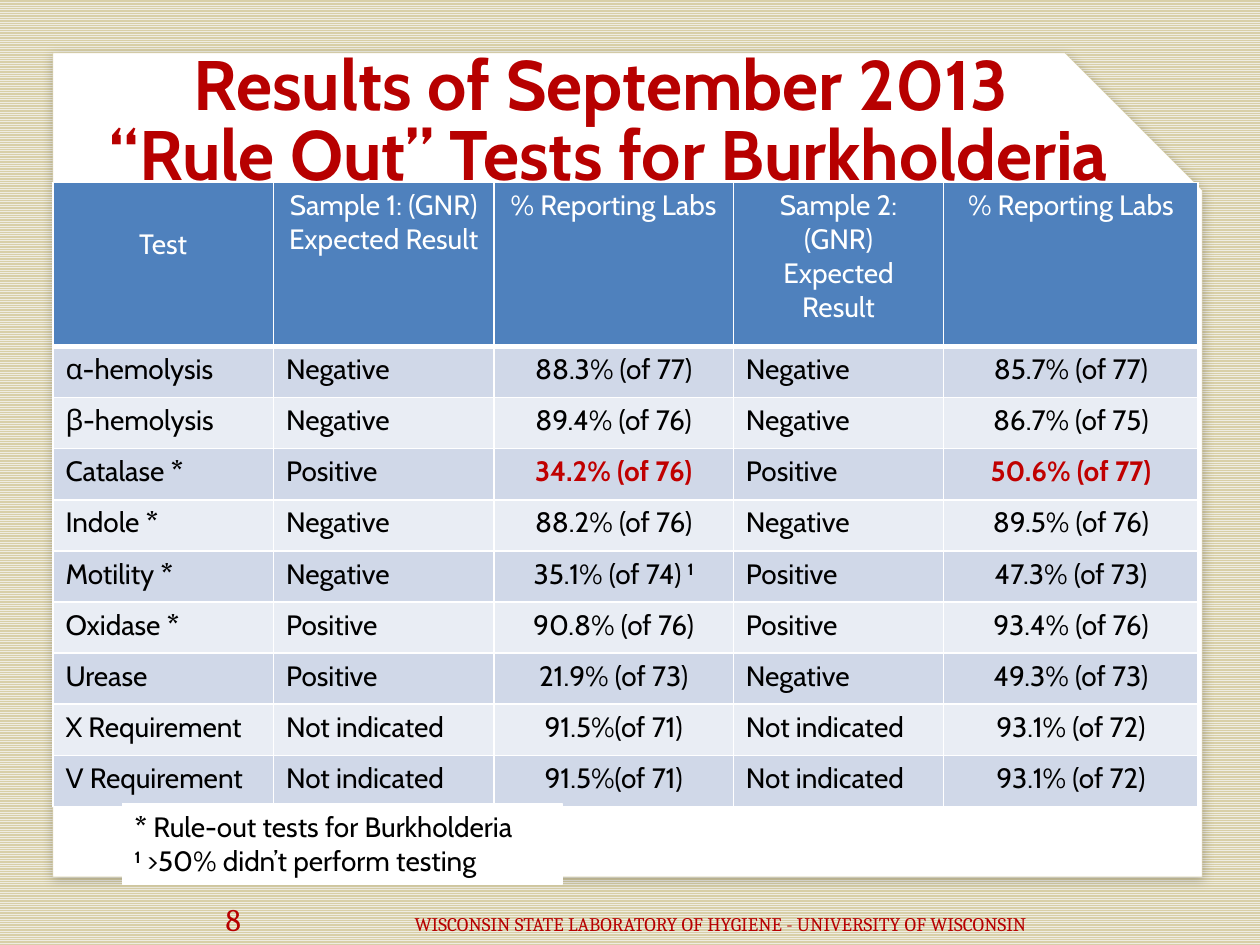
from lxml import etree
from pptx import Presentation
from pptx.dml.color import RGBColor
from pptx.enum.dml import MSO_PATTERN
from pptx.enum.shapes import MSO_SHAPE
from pptx.enum.text import MSO_ANCHOR, PP_ALIGN
from pptx.oxml import parse_xml
from pptx.oxml.ns import nsdecls, qn
from pptx.util import Inches, Pt

LEFT, CENTER = PP_ALIGN.LEFT, PP_ALIGN.CENTER
TOP, MIDDLE = MSO_ANCHOR.TOP, MSO_ANCHOR.MIDDLE
CARD, RECTANGLE = MSO_SHAPE.SNIP_1_RECTANGLE, MSO_SHAPE.RECTANGLE
STRIPES = MSO_PATTERN.NARROW_HORIZONTAL

BODY_FONT, FOOTER_FONT = "Cabin", "Cambria"
WHITE, BLACK, RED, ALERT = "FFFFFF", "000000", "B70000", "C00000"
CREAM, SAND = "EEECE1", "D8CFA7"
HEADER_BLUE, BANDS = "4F81BD", ("D0D8E8", "E9EDF4")

UNIT = 0.1  # inches: the slide is a grid of 100 columns by 75 rows
FOOTNOTE_MARKS = ("*", "1")

TITLE = "Results of September 2013\v “Rule Out” Tests for Burkholderia"
HEADER = ["Test", "Sample 1: (GNR) Expected Result", "% Reporting Labs",
          "Sample 2: (GNR) Expected Result", "% Reporting Labs"]
RESULTS = [
    ["α-hemolysis", "Negative", "88.3% (of 77)", "Negative", "85.7% (of 77)"],
    ["β-hemolysis", "Negative", "89.4% (of 76)", "Negative", "86.7% (of 75)"],
    ["Catalase |*", "Positive", "34.2% (of 76)", "Positive", "50.6% (of 77)"],
    ["Indole |*", "Negative", "88.2% (of 76)", "Negative", "89.5% (of 76)"],
    ["Motility |*", "Negative", "35.1% (of 74) |1", "Positive", "47.3% (of 73)"],
    ["Oxidase |*", "Positive", "90.8% (of 76)", "Positive", "93.4% (of 76)"],
    ["Urease", "Positive", "21.9% (of 73)", "Negative", "49.3% (of 73)"],
    ["X Requirement", "Not indicated", "91.5%(of 71)", "Not indicated", "93.1% (of 72)"],
    ["V Requirement", "Not indicated", "91.5%(of 71)", "Not indicated", "93.1% (of 72)"],
]
HIGHLIGHTS = ("34.2% (of 76)", "50.6% (of 77)")
FOOTNOTES = ["*| Rule-out tests for Burkholderia", "1| >50% didn’t perform testing"]
FOOTER = "WISCONSIN STATE LABORATORY OF HYGIENE - UNIVERSITY OF WISCONSIN"


def color(hex_string):
    return RGBColor.from_string(hex_string)


def grid(*units):
    return [Inches(unit * UNIT) for unit in units]


class SlideBuilder:
    def __init__(self, presentation):
        self.slide = presentation.slides.add_slide(presentation.slide_layouts[6])

    def background(self, foreground, back):
        fill = self.slide.background.fill
        fill.patterned()
        fill.pattern = STRIPES
        fill.fore_color.rgb = color(foreground)
        fill.back_color.rgb = color(back)

    def style(self, run, size=16, font=BODY_FONT, ink=BLACK, bold=False):
        run.font.size, run.font.name, run.font.bold = Pt(size), font, bold
        run.font.color.rgb = color(ink)

    def marked_text(self, paragraph, text, ink=BLACK, bold=False, align=LEFT):
        """Add runs split at "|"; footnote marks are bold, digits raised."""
        paragraph.alignment = align
        for piece in text.split("|"):
            run = paragraph.add_run()
            run.text = piece
            self.style(run, ink=ink, bold=bold or piece in FOOTNOTE_MARKS)
            if piece == "1":
                run.font._element.set("baseline", "30000")

    def shape(self, kind, place, line_color, line_width):
        shape = self.slide.shapes.add_shape(kind, *grid(*place))
        shape.shadow.inherit = False
        shape.fill.solid()
        shape.fill.fore_color.rgb = color(WHITE)
        shape.line.color.rgb = color(line_color)
        shape.line.width = Pt(line_width)
        return shape

    def card(self, place):
        card = self.shape(CARD, place, SAND, 0.25)
        effects = card._element.spPr.find(qn("a:effectLst"))
        effects.append(parse_xml(
            f'<a:outerShdw {nsdecls("a")} blurRad="{Pt(6)}" dist="{Pt(2)}" '
            f'dir="{80 * 60000}" algn="tl" rotWithShape="0"><a:srgbClr val="{BLACK}">'
            '<a:alpha val="22000"/></a:srgbClr></a:outerShdw>'))

    def text_box(self, place, anchor, inset_left=0):
        frame = self.slide.shapes.add_textbox(*grid(*place)).text_frame
        frame.word_wrap, frame.vertical_anchor = True, anchor
        frame.margin_top = frame.margin_right = frame.margin_bottom = 0
        frame.margin_left, = grid(inset_left)
        return frame.paragraphs[0]

    def title(self, place, text):
        paragraph = self.text_box(place, TOP)
        paragraph.text = text
        paragraph.alignment, paragraph.line_spacing = CENTER, Pt(40)
        for run in paragraph.runs:
            self.style(run, 40, ink=RED, bold=True)

    def footer(self, place, number, text, number_left, text_left):
        paragraph = self.text_box(place, MIDDLE, number_left)
        tab_list = etree.SubElement(paragraph._p.get_or_add_pPr(), qn("a:tabLst"))
        position, = grid(text_left - number_left)
        etree.SubElement(tab_list, qn("a:tab"), pos=str(position), algn="l")
        for piece, size in ((number, 18), ("\t" + text, 11)):
            run = paragraph.add_run()
            run.text = piece
            self.style(run, size, FOOTER_FONT, RED)

    def cell(self, cell, text, fill, top, bottom, **text_style):
        """Fill one cell; top and bottom are border widths in points."""
        properties = cell._tc.get_or_add_tcPr()
        for side, width in (("L", 1), ("R", 1), ("T", top), ("B", bottom)):
            properties.append(parse_xml(
                f'<a:ln{side} {nsdecls("a")} w="{Pt(width)}"><a:solidFill>'
                f'<a:srgbClr val="{WHITE}"/></a:solidFill></a:ln{side}>'))
        cell.fill.solid()
        cell.fill.fore_color.rgb = color(fill)
        self.marked_text(cell.text_frame.paragraphs[0], text, **text_style)

    def table(self, place, widths, header_height):
        table = self.slide.shapes.add_table(
            len(RESULTS) + 1, len(HEADER), *grid(*place)).table
        row_height = (place[3] - header_height) / len(RESULTS)
        for column, width in zip(table.columns, grid(*widths)):
            column.width = width
        heights = [header_height] + [row_height] * len(RESULTS)
        for row, height in zip(table.rows, grid(*heights)):
            row.height = height
        for column, text in enumerate(HEADER):
            self.cell(table.cell(0, column), text, HEADER_BLUE, 1, 3,
                      ink=WHITE, align=CENTER)
        table.cell(0, 0).margin_top, = grid(3.6)
        for row, texts in enumerate(RESULTS, 1):
            for column, text in enumerate(texts):
                alert = text in HIGHLIGHTS
                self.cell(table.cell(row, column), text, BANDS[(row - 1) % 2],
                          3 if row == 1 else 1, 1,
                          ink=ALERT if alert else BLACK, bold=alert,
                          align=CENTER if column in (2, 4) else LEFT)

    def footnotes(self, place, notes):
        frame = self.shape(RECTANGLE, place, WHITE, 0.75).text_frame
        frame.word_wrap, frame.vertical_anchor = True, TOP
        for index, note in enumerate(notes):
            paragraph = frame.add_paragraph() if index else frame.paragraphs[0]
            self.marked_text(paragraph, note)


def main():
    presentation = Presentation()
    presentation.slide_width, presentation.slide_height = grid(100, 75)
    builder = SlideBuilder(presentation)
    builder.background(CREAM, SAND)
    builder.card((4.2, 4.2, 91.2, 65.4))
    builder.title((0, 4.3, 95.4, 15.5), TITLE)
    builder.table((4.2, 14.5, 90.9, 49.5), (17.5, 17.5, 19, 16.7, 20.2), 13)
    builder.footer((4.2, 70.9, 91.2, 4), "8", FOOTER, 13.7, 28.7)
    builder.footnotes((9.7, 63.8, 34.9, 6.4), FOOTNOTES)
    presentation.save("out.pptx")


if __name__ == "__main__":
    main()
